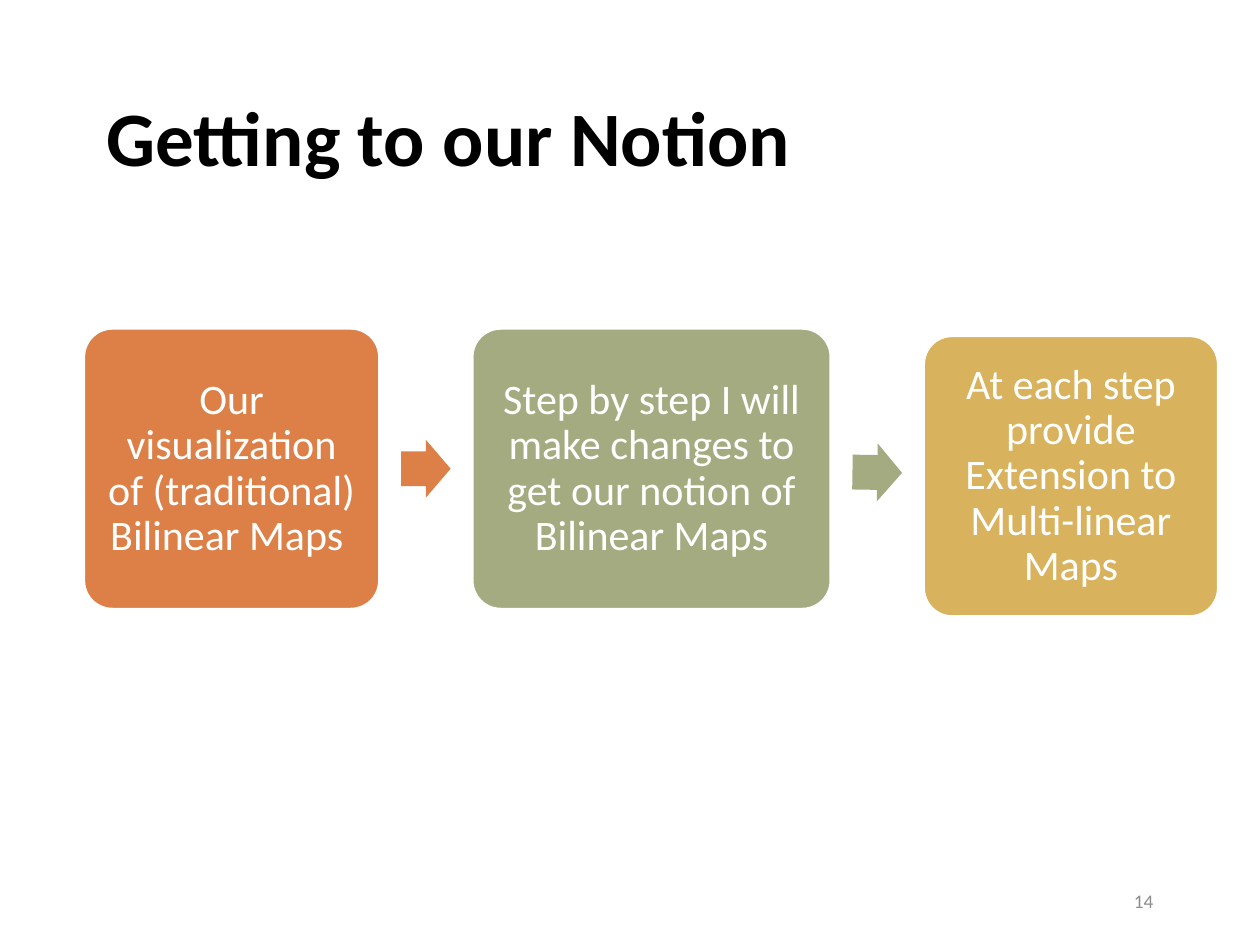
from pptx import Presentation
from pptx.dml.color import RGBColor
from pptx.enum.shapes import MSO_SHAPE as SHAPE
from pptx.enum.text import MSO_ANCHOR as ANCHOR, PP_ALIGN as ALIGN
from pptx.util import Cm, Pt

WHITE = "FFFFFF"
BOX_H, GAP = 5.64, 1.89
ARROW_W, ARROW_H = 1.0, 1.17

# text, colour, width, drop below the top of the row
STEPS = [
    ("Our visualization of (traditional) Bilinear Maps ", "DD8047", 5.94, 0),
    ("Step by step I will make changes to get our notion of Bilinear Maps",
     "A5AB81", 7.21, 0),
    ("At each step provide Extension to Multi-linear Maps", "D8B25C", 5.92, 0.15),
]


def rgb(value):
    return RGBColor.from_string(value)


def write(s, text, size, color, bold=False, align=ALIGN.LEFT, spacing=1.0):
    tf = s.text_frame
    tf.word_wrap = True
    tf.vertical_anchor = ANCHOR.MIDDLE
    p = tf.paragraphs[0]
    p.alignment = align
    p.line_spacing = spacing
    r = p.add_run()
    r.text = text
    r.font.name = "Calibri"
    r.font.size = Pt(size)
    r.font.bold = bold
    r.font.color.rgb = rgb(color)


def add_label(slide, box, text, **fmt):
    write(slide.shapes.add_textbox(*map(Cm, box)), text, **fmt)


def add_block(slide, kind, box, fill, adjustments):
    s = slide.shapes.add_shape(kind, *map(Cm, box))
    s.shadow.inherit = False
    s.fill.solid()
    s.fill.fore_color.rgb = rgb(fill)
    s.line.fill.background()
    for i, value in enumerate(adjustments):
        s.adjustments[i] = value
    return s


def add_step(slide, box, text, fill):
    s = add_block(slide, SHAPE.ROUNDED_RECTANGLE, box, fill, [0.1])
    s.line.color.rgb = rgb(WHITE)
    s.line.width = Pt(1)
    tf = s.text_frame
    tf.margin_left = tf.margin_right = tf.margin_top = tf.margin_bottom = Cm(0.25)
    write(s, text, 24, WHITE, align=ALIGN.CENTER, spacing=0.9)


def add_process(slide, left, top, steps):
    """Place the steps in a row, with an arrow centred in each gap."""
    x = left
    for i, (text, fill, width, drop) in enumerate(steps):
        add_step(slide, (x, top + drop, width, BOX_H), text, fill)
        x += width
        if i < len(steps) - 1:
            slope = steps[i + 1][3] - drop
            middle = top + drop + (BOX_H + slope) / 2
            box = (x + (GAP - ARROW_W) / 2, middle - ARROW_H / 2, ARROW_W, ARROW_H)
            arrow = add_block(slide, SHAPE.RIGHT_ARROW, box, fill, [0.6, 0.5])
            arrow.rotation = 0.9 if slope else 0
        x += GAP


def main():
    prs = Presentation()
    prs.slide_width, prs.slide_height = Cm(25.4), Cm(19.05)
    slide = prs.slides.add_slide(prs.slide_layouts[6])
    add_label(slide, (1.9, 1.02, 21.6, 3.68), "Getting to our Notion",
              size=44, color="000000", bold=True, spacing=0.9)
    add_process(slide, 1.7, 6.63, STEPS)
    add_label(slide, (17.78, 17.65, 5.72, 1.02), "14",
              size=11, color="8C8C8C", align=ALIGN.RIGHT)
    prs.save("out.pptx")


if __name__ == "__main__":
    main()
